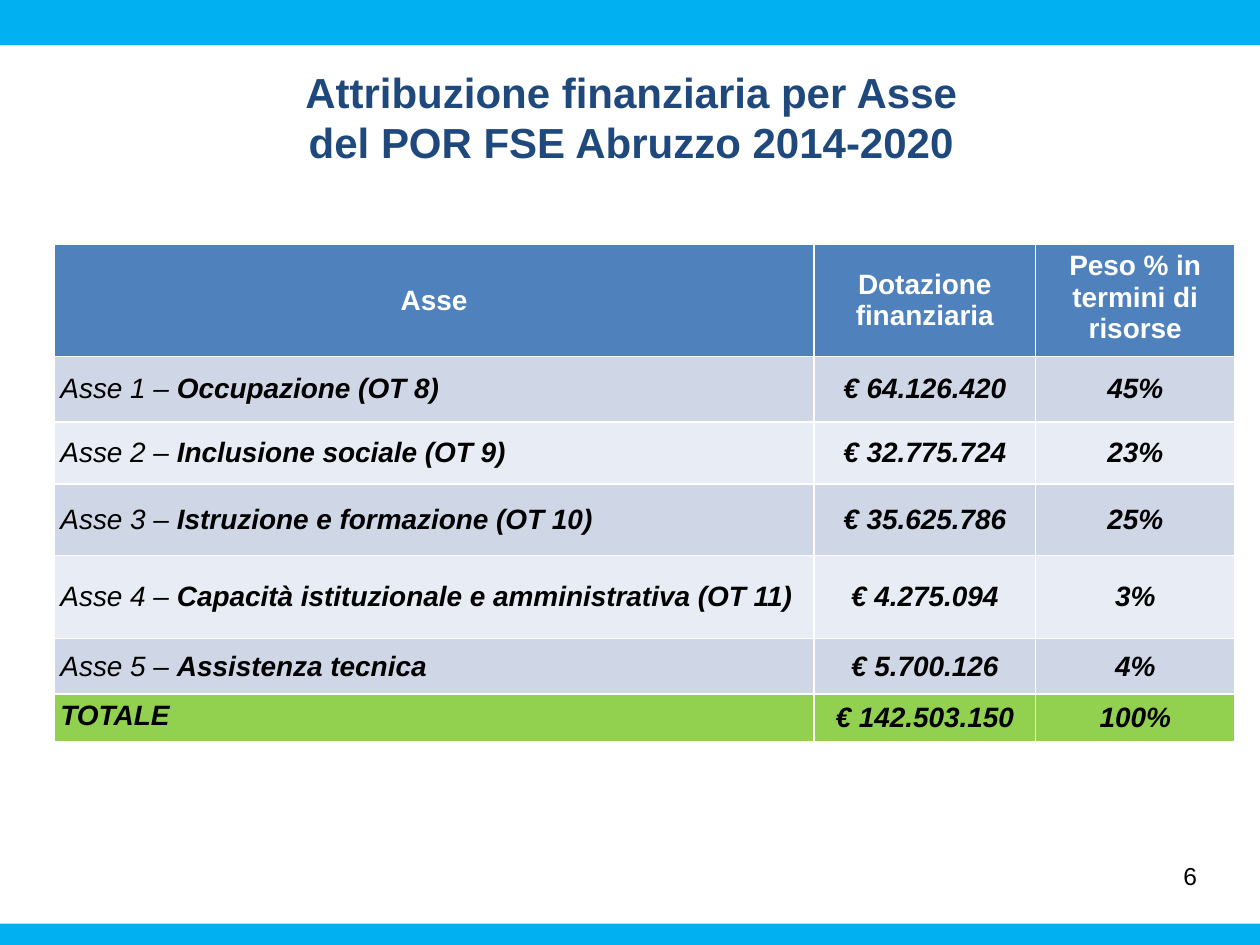
from pptx import Presentation
from pptx.dml.color import RGBColor
from pptx.enum.shapes import MSO_SHAPE
from pptx.enum.text import MSO_ANCHOR, MSO_AUTO_SIZE, PP_ALIGN
from pptx.util import Inches, Pt

FONT = "Arial"
SKY = RGBColor(0x00, 0xB0, 0xF0)
NAVY = RGBColor(0x1F, 0x49, 0x7D)
BLUE = RGBColor(0x4F, 0x81, 0xBD)
BANDS = (RGBColor(0xCF, 0xD7, 0xE7), RGBColor(0xE8, 0xEC, 0xF4))
GREEN = RGBColor(0x92, 0xD0, 0x50)
WHITE = RGBColor(0xFF, 0xFF, 0xFF)
BLACK = RGBColor(0x00, 0x00, 0x00)

TITLE = ("Attribuzione finanziaria per Asse", "del POR FSE Abruzzo 2014-2020")
HEADINGS = ("Asse", "Dotazione finanziaria", "Peso % in termini di risorse")
AXES = (
    ("Occupazione (OT 8)", "€ 64.126.420", "45%"),
    ("Inclusione sociale (OT 9)", "€ 32.775.724", "23%"),
    ("Istruzione e formazione (OT 10)", "€ 35.625.786", "25%"),
    ("Capacità istituzionale e amministrativa (OT 11)", "€ 4.275.094", "3%"),
    ("Assistenza tecnica", "€ 5.700.126", "4%"),
)
TOTAL = ("TOTALE", "€ 142.503.150", "100%")
COLUMN_WIDTHS = (6.03, 1.76, 1.58)
ROW_HEIGHTS = (0.89, 0.52, 0.49, 0.57, 0.66, 0.44, 0.38)


def set_font(font, size, color, bold=False, italic=False):
    font.name = FONT
    font.size = Pt(size)
    font.color.rgb = color
    font.bold = bold
    font.italic = italic


def clear_insets(text_frame):
    text_frame.margin_left = text_frame.margin_right = 0
    text_frame.margin_top = text_frame.margin_bottom = 0
    text_frame.word_wrap = True


def add_band(slide, top, width, height):
    """Draw a full-width coloured strip."""
    band = slide.shapes.add_shape(MSO_SHAPE.RECTANGLE, 0, top, width, height)
    band.shadow.inherit = False
    band.fill.solid()
    band.fill.fore_color.rgb = SKY
    band.line.fill.background()


def write_title(slide):
    title = slide.shapes.title
    title.left, title.top = Inches(0.91), Inches(0.49)
    title.width, title.height = Inches(8.2), Inches(0.87)
    text_frame = title.text_frame
    clear_insets(text_frame)
    text_frame.auto_size = MSO_AUTO_SIZE.NONE
    text_frame.vertical_anchor = MSO_ANCHOR.MIDDLE
    text_frame.text = "\n".join(TITLE)
    for paragraph in text_frame.paragraphs:
        paragraph.alignment = PP_ALIGN.CENTER
        set_font(paragraph.font, 24, NAVY, bold=True)


def style_cell(cell, fill, centred=True, anchor=MSO_ANCHOR.MIDDLE):
    cell.fill.solid()
    cell.fill.fore_color.rgb = fill
    cell.vertical_anchor = anchor
    cell.margin_left = cell.margin_right = Inches(0.05)
    cell.margin_top = cell.margin_bottom = Inches(0.05)
    cell.text_frame.paragraphs[0].alignment = (
        PP_ALIGN.CENTER if centred else PP_ALIGN.LEFT
    )


def fill_row(table, row, texts, fill, color, italic):
    for column, text in enumerate(texts):
        cell = table.cell(row, column)
        cell.text = text
        style_cell(cell, fill)
        set_font(cell.text_frame.paragraphs[0].font, 16, color, True, italic)


def write_axis_name(cell, number, name, fill):
    """Write the axis number in regular italics and its name in bold italics."""
    cell.text = ""
    paragraph = cell.text_frame.paragraphs[0]
    for text, bold in ((f"Asse {number} – ", False), (name, True)):
        run = paragraph.add_run()
        run.text = text
        set_font(run.font, 16, BLACK, bold, italic=True)
    style_cell(cell, fill, centred=False)


def add_allocation_table(slide):
    table = slide.shapes.add_table(
        len(ROW_HEIGHTS), len(COLUMN_WIDTHS), Inches(0.43), Inches(1.94),
        Inches(sum(COLUMN_WIDTHS)), Inches(sum(ROW_HEIGHTS)),
    ).table
    for column, width in zip(table.columns, COLUMN_WIDTHS):
        column.width = Inches(width)
    for row, height in zip(table.rows, ROW_HEIGHTS):
        row.height = Inches(height)

    fill_row(table, 0, HEADINGS, BLUE, WHITE, italic=False)
    table.cell(0, 2).vertical_anchor = MSO_ANCHOR.TOP
    for number, axis in enumerate(AXES, start=1):
        fill = BANDS[(number - 1) % 2]
        fill_row(table, number, axis, fill, BLACK, italic=True)
        write_axis_name(table.cell(number, 0), number, axis[0], fill)
    last = len(ROW_HEIGHTS) - 1
    fill_row(table, last, TOTAL, GREEN, BLACK, italic=True)
    style_cell(table.cell(last, 0), GREEN, False, MSO_ANCHOR.TOP)


def add_page_number(slide, number):
    box = slide.shapes.add_textbox(
        Inches(7.17), Inches(6.83), Inches(2.33), Inches(0.52)
    )
    clear_insets(box.text_frame)
    paragraph = box.text_frame.paragraphs[0]
    paragraph.text = str(number)
    paragraph.alignment = PP_ALIGN.RIGHT
    set_font(paragraph.font, 14, BLACK)


def main():
    presentation = Presentation()
    presentation.slide_width, presentation.slide_height = Inches(10), Inches(7.5)
    slide = presentation.slides.add_slide(presentation.slide_layouts[5])
    width, height = presentation.slide_width, presentation.slide_height
    footer = Inches(0.17)
    add_band(slide, 0, width, Inches(0.36))
    add_band(slide, height - footer, width, footer)
    write_title(slide)
    add_allocation_table(slide)
    add_page_number(slide, 6)
    presentation.save("out.pptx")


if __name__ == "__main__":
    main()
